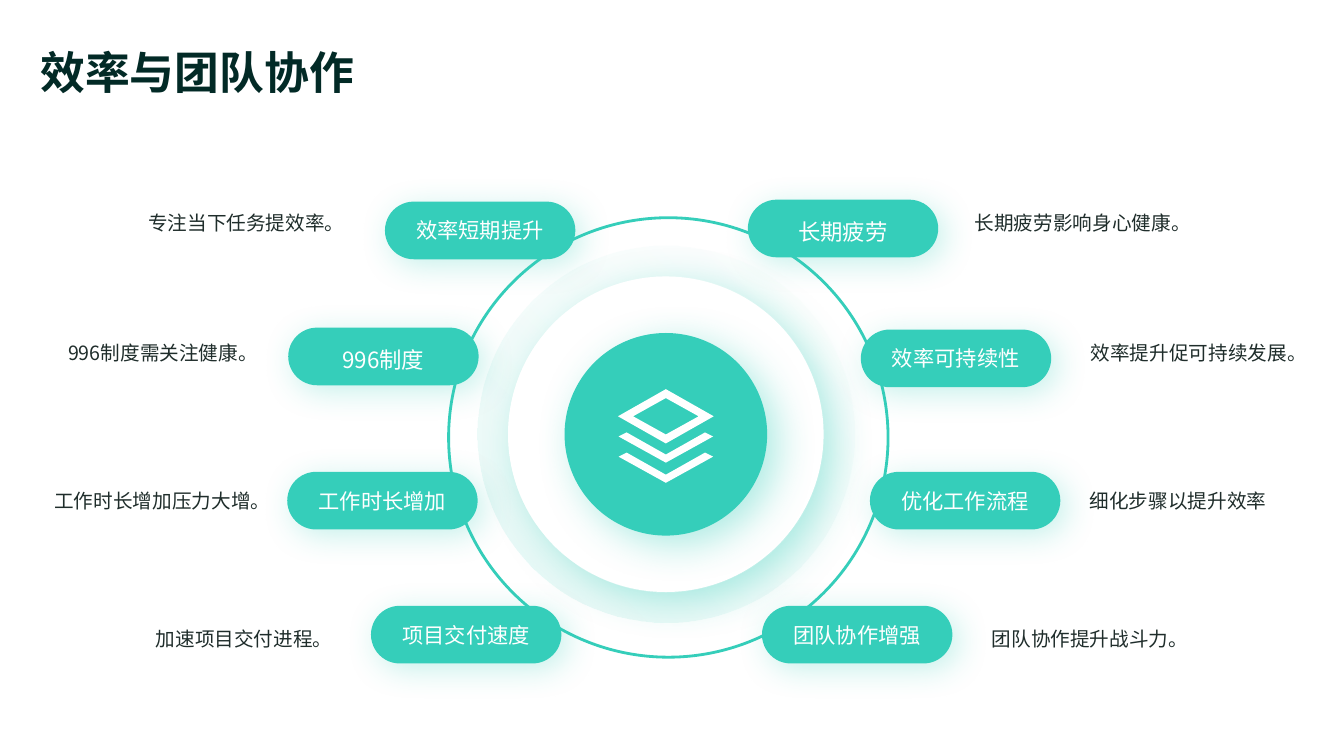
"""Build a slide of eight labelled pills with notes around a central layers icon."""
from dataclasses import dataclass
from typing import Any, Optional

from lxml.etree import SubElement
from pptx import Presentation
from pptx.dml.color import RGBColor
from pptx.enum.shapes import MSO_SHAPE as Preset
from pptx.enum.text import MSO_ANCHOR as Anchor, MSO_AUTO_SIZE as AutoSize, PP_ALIGN as Align
from pptx.oxml.ns import qn
from pptx.util import Pt

FONT = "Noto Sans CJK SC"
TEAL, WHITE, INK, TITLE_INK = "35CEBA", "FFFFFF", "1F2D2B", "022A26"
PILL_WIDTH, PILL_HEIGHT, NOTE_HEIGHT = 136, 41.2, 56.9
HUB_CENTER, RING_CENTER = (475.6, 310.2), (477.4, 312.5)


@dataclass
class Shadow:
    alpha: int
    blur: float
    distance: float
    angle: int


@dataclass
class Topic:
    label: str
    pill_left: float
    pill_top: float
    note: str
    note_left: float
    note_top: float
    note_width: float
    label_size: float = 15.2
    label_spacing: float = 1.0


PILL_SHADOW = Shadow(28, 23, 6, 45)
HUB_SHADOW = Shadow(40, 29, 10, 40)

LEFT_TOPICS = [
    Topic("效率短期提升", 275, 144, "专注当下任务提效率。", 35.3, 130.3, 216.7),
    Topic("996制度", 205.9, 234, "996制度需关注健康。", 35.3, 223.2, 154.8, 16, 1.2),
    Topic("工作时长增加", 205.2, 337, "工作时长增加压力大增。", 30.2, 329, 154.8),
    Topic("项目交付速度", 265, 432.7, "加速项目交付进程。", 35.3, 427.7, 208.1),
]
RIGHT_TOPICS = [
    Topic("长期疲劳", 534.2, 142.6, "长期疲劳影响身心健康。", 690.5, 130.3, 230.4, 16, 1.2),
    Topic("效率可持续性", 614.9, 235.4, "效率提升促可持续发展。", 773.3, 223.2, 154.8),
    Topic("优化工作流程", 621.4, 337, "细化步骤以提升效率", 772.6, 329, 154.8),
    Topic("团队协作增强", 544.3, 432.7, "团队协作提升战斗力。", 702.7, 427.7, 224.6),
]


def color(value: str) -> RGBColor:
    return RGBColor.from_string(value)


def write(shape: Any, text: str, *, size: float, ink: str, align: Align = Align.LEFT,
          bold: bool = False, spacing: float = 1.0, margins: tuple = (7.2, 3.6)) -> None:
    frame = shape.text_frame
    frame.word_wrap = True
    frame.auto_size = AutoSize.NONE
    frame.vertical_anchor = Anchor.MIDDLE
    frame.margin_left = frame.margin_right = Pt(margins[0])
    frame.margin_top = frame.margin_bottom = Pt(margins[1])
    paragraph = frame.paragraphs[0]
    paragraph.alignment = align
    paragraph.line_spacing = spacing
    run = paragraph.add_run()
    run.text = text
    run.font.size = Pt(size)
    run.font.bold = bold
    run.font.name = FONT
    run.font.color.rgb = color(ink)
    SubElement(run.font._element, qn("a:ea"), typeface=FONT)


def add_preset(slide: Any, preset: Preset, left: float, top: float, width: float, height: float,
               *, fill: Optional[str] = None, line: Optional[str] = None,
               shadow: Optional[Shadow] = None) -> Any:
    shape = slide.shapes.add_shape(preset, Pt(left), Pt(top), Pt(width), Pt(height))
    if fill:
        shape.fill.solid()
        shape.fill.fore_color.rgb = color(fill)
    else:
        shape.fill.background()
    if line:
        shape.line.color.rgb = color(line)
        shape.line.width = Pt(2)
    else:
        shape.line.fill.background()
    shape.shadow.inherit = False
    if shadow:
        effects = shape._element.spPr.find(qn("a:effectLst"))
        outer = SubElement(effects, qn("a:outerShdw"), blurRad=str(Pt(shadow.blur)),
                           dist=str(Pt(shadow.distance)), dir=str(shadow.angle * 60000),
                           algn="ctr", rotWithShape="0")
        tint = SubElement(outer, qn("a:srgbClr"), val=TEAL)
        SubElement(tint, qn("a:alpha"), val=str(shadow.alpha * 1000))
    return shape


def add_round(slide: Any, preset: Preset, center: tuple, diameter: float, **style: Any) -> Any:
    left, top = (middle - diameter / 2 for middle in center)
    return add_preset(slide, preset, left, top, diameter, diameter, **style)


def add_halo(slide: Any) -> None:
    halo = add_round(slide, Preset.DONUT, HUB_CENTER, 269.3)
    halo.adjustments[0] = 0.081
    halo.fill.gradient()
    halo.fill.gradient_angle = 45
    for stop, tint, alpha in zip(halo.fill.gradient_stops, ("C2F0EA", "D7F5F1"), (44, 0)):
        stop.color.rgb = color(tint)
    for node, alpha in zip(halo._element.spPr.iter(qn("a:srgbClr")), (44, 0)):
        SubElement(node, qn("a:alpha"), val=str(alpha * 1000))


def add_layers_icon(slide: Any, center_x: float) -> None:
    def diamond(half_width: float, half_height: float) -> list:
        middle = 297.4
        return [(0, middle - half_height), (half_width, middle),
                (0, middle + half_height), (-half_width, middle)]

    def chevron(top: float) -> list:
        return [(28, top), (33.8, top + 2.9), (0, top + 21.6),
                (-33.8, top + 2.9), (-28, top), (0, top + 15.8)]

    contours = [[(Pt(center_x + x), Pt(y)) for x, y in contour]
                for contour in (chevron(323.3), chevron(308.9), diamond(34.2, 19.4), diamond(23.4, 13))]
    builder = slide.shapes.build_freeform(*contours[0][0])
    for index, contour in enumerate(contours):
        if index:
            builder.move_to(*contour[0])
        builder.add_line_segments(contour[1:], close=True)
    icon = builder.convert_to_shape()
    icon.fill.solid()
    icon.fill.fore_color.rgb = color(WHITE)
    icon.line.fill.background()
    icon.shadow.inherit = False


def add_note(slide: Any, topic: Topic, align: Align) -> None:
    box = slide.shapes.add_textbox(Pt(topic.note_left), Pt(topic.note_top),
                                   Pt(topic.note_width), Pt(NOTE_HEIGHT))
    write(box, topic.note, size=14, ink=INK, align=align, margins=(5.76, 2.88))


def add_pill(slide: Any, topic: Topic) -> None:
    pill = add_preset(slide, Preset.ROUNDED_RECTANGLE, topic.pill_left, topic.pill_top,
                      PILL_WIDTH, PILL_HEIGHT, fill=TEAL, shadow=PILL_SHADOW)
    pill.adjustments[0] = 0.5
    write(pill, topic.label, size=topic.label_size, ink=WHITE, align=Align.CENTER,
          spacing=topic.label_spacing)


def main() -> None:
    presentation = Presentation()
    presentation.slide_width, presentation.slide_height = Pt(960), Pt(540)
    slide = presentation.slides.add_slide(presentation.slide_layouts[5])

    title = slide.shapes.title
    title.left, title.top, title.width, title.height = Pt(21.6), Pt(18.7), Pt(918.7), Pt(56.9)
    write(title, "效率与团队协作", size=32, ink=TITLE_INK, bold=True, spacing=1.2)

    for topics, align in ((LEFT_TOPICS, Align.RIGHT), (RIGHT_TOPICS, Align.LEFT)):
        for topic in topics:
            add_note(slide, topic, align)

    add_round(slide, Preset.OVAL, RING_CENTER, 313.9, line=TEAL)
    add_halo(slide)
    for diameter, fill in ((225.4, WHITE), (144.7, TEAL)):
        add_round(slide, Preset.OVAL, HUB_CENTER, diameter, fill=fill, shadow=HUB_SHADOW)
    add_layers_icon(slide, HUB_CENTER[0])

    for topic in LEFT_TOPICS + RIGHT_TOPICS:
        add_pill(slide, topic)
    presentation.save("out.pptx")


if __name__ == "__main__":
    main()
